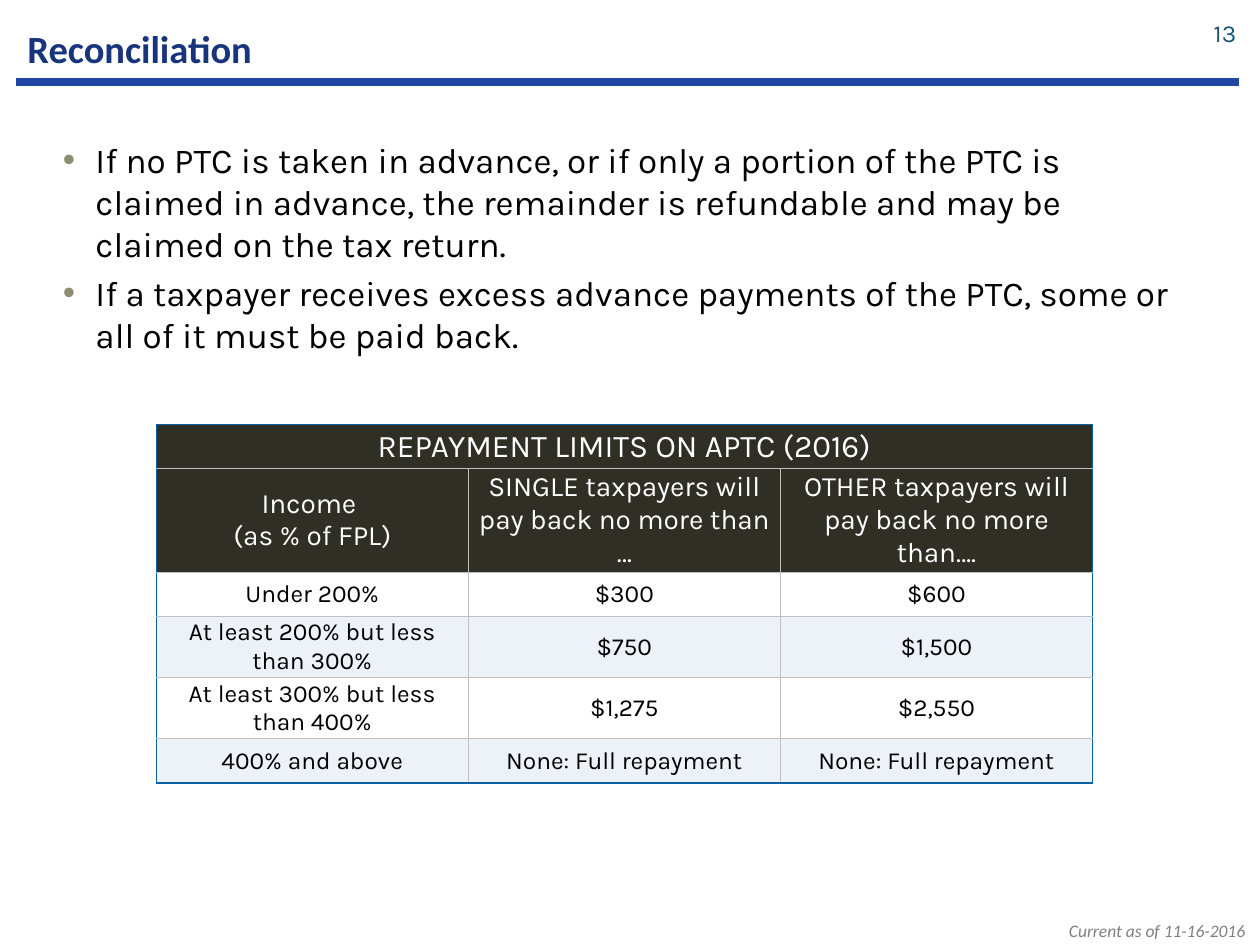
import pptx
import pptx.dml.color
import pptx.enum.shapes
import pptx.enum.text
import pptx.oxml
import pptx.oxml.ns
import pptx.util

COLORS = {
    "title": "18347C", "rule": "2046A5", "number": "175475", "footer": "808080",
    "bullet": "8D8D72", "text": "000000", "header": "2F2F26", "header_text": "FFFFFF",
    "plain": "FFFFFF", "band": "ECF2F8", "outer": "0C61A4", "inner": "BFBFBF",
}
GRID_COLUMNS, GRID_ROWS = 100, 75
CELL = pptx.util.Inches(0.1)

BULLETS = [
    "If no PTC is taken in advance, or if only a portion of the PTC is claimed "
    "in advance, the remainder is refundable and may be claimed on the tax return.",
    "If a taxpayer receives excess advance payments of the PTC, some or all of it "
    "must be paid back.",
]
TABLE = [
    ["REPAYMENT LIMITS ON APTC (2016)", "", ""],
    ["Income \n(as % of FPL)", "SINGLE taxpayers will pay back no more than …",
     "OTHER taxpayers will pay back no more than…."],
    ["Under 200%", "$300", "$600"],
    ["At least 200% but less than 300%", "$750", "$1,500"],
    ["At least 300% but less than 400%", "$1,275", "$2,550"],
    ["400% and above", "None: Full repayment", "None: Full repayment"],
]
HEADER_SIZES = [18, 16]
BODY_SIZE = 14


def grid(*cells):
    """Turn counts of grid columns or rows into slide lengths."""
    return [int(cell * CELL) for cell in cells]


def rgb(name):
    return pptx.dml.color.RGBColor.from_string(COLORS[name])


def format_runs(paragraph, size, color, font="Karla", bold=False, italic=False):
    for run in paragraph.runs:
        run.font.name = font
        run.font.size = pptx.util.Pt(size)
        run.font.color.rgb = rgb(color)
        run.font.bold = bold
        run.font.italic = italic


def add_text(slide, box, text, align="LEFT", anchor="MIDDLE", **style):
    text_frame = slide.shapes.add_textbox(*grid(*box)).text_frame
    text_frame.word_wrap = True
    text_frame.vertical_anchor = pptx.enum.text.MSO_ANCHOR[anchor]
    text_frame.text = text
    for paragraph in text_frame.paragraphs:
        paragraph.alignment = pptx.enum.text.PP_ALIGN[align]
        format_runs(paragraph, **style)
    return text_frame


def add_rule(slide, left, right, row):
    line = slide.shapes.add_connector(
        pptx.enum.shapes.MSO_CONNECTOR.STRAIGHT, *grid(left, row, right, row))
    line.line.color.rgb = rgb("rule")
    line.line.width = pptx.util.Pt(4.75)
    properties = line._element.spPr
    properties.append(properties.makeelement(pptx.oxml.ns.qn("a:effectLst"), {}))


def add_bullets(slide, box, items):
    text_frame = add_text(slide, box, "\n".join(items), anchor="TOP", size=20, color="text")
    indent = pptx.util.Inches(0.26)
    for index, paragraph in enumerate(text_frame.paragraphs):
        if index:
            paragraph.space_before = pptx.util.Pt(4)
        properties = paragraph._p.get_or_add_pPr()
        properties.set("marL", str(indent))
        properties.set("indent", str(-indent))
        namespace = pptx.oxml.ns.nsdecls("a")
        for markup in (
            f'<a:buClr {namespace}><a:srgbClr val="{COLORS["bullet"]}"/></a:buClr>',
            f'<a:buFont {namespace} typeface="Arial"/>',
            f'<a:buChar {namespace} char="•"/>',
        ):
            properties.append(pptx.oxml.parse_xml(markup))


def set_borders(cell, outer_sides):
    """Draw the sides named in outer_sides in the frame colour, the others as thin rules."""
    properties = cell._tc.get_or_add_tcPr()
    for index, side in enumerate("LRTB"):
        color, points = ("outer", 1) if side in outer_sides else ("inner", 0.5)
        properties.insert(index, pptx.oxml.parse_xml(
            f'<a:ln{side} {pptx.oxml.ns.nsdecls("a")} w="{pptx.util.Pt(points)}">'
            f'<a:solidFill><a:srgbClr val="{COLORS[color]}"/></a:solidFill></a:ln{side}>'))


def format_cell(cell, text, size, color, fill, outer_sides, margins):
    cell.text = text
    cell.vertical_anchor = pptx.enum.text.MSO_ANCHOR.MIDDLE
    horizontal, vertical = [pptx.util.Inches(margin) for margin in margins]
    cell.margin_left = cell.margin_right = horizontal
    cell.margin_top = cell.margin_bottom = vertical
    cell.fill.solid()
    cell.fill.fore_color.rgb = rgb(fill)
    set_borders(cell, outer_sides)
    for paragraph in cell.text_frame.paragraphs:
        paragraph.alignment = pptx.enum.text.PP_ALIGN.CENTER
        format_runs(paragraph, size, color)


def add_limits_table(slide, left, top, column_width, row_heights):
    row_count, column_count = len(TABLE), len(TABLE[0])
    box = grid(left, top, column_width * column_count, sum(row_heights))
    table = slide.shapes.add_table(row_count, column_count, *box).table
    for column in table.columns:
        column.width = grid(column_width)[0]
    for row, height in zip(table.rows, row_heights):
        row.height = grid(height)[0]
    for row_index, texts in enumerate(TABLE):
        is_header = row_index < len(HEADER_SIZES)
        size = HEADER_SIZES[row_index] if is_header else BODY_SIZE
        color = "header_text" if is_header else "text"
        fill = "header" if is_header else ("plain", "band")[row_index % 2]
        margins = (0.03, 0.01) if row_index else (0, 0)
        for column_index, text in enumerate(texts):
            edges = {"L": column_index == 0, "R": column_index == column_count - 1,
                     "T": row_index == 0, "B": row_index == row_count - 1}
            outer_sides = [side for side, is_edge in edges.items() if is_edge]
            if row_index == 0:
                outer_sides = ["L", "R", "T"]
            format_cell(table.cell(row_index, column_index), text, size, color, fill,
                        outer_sides, margins)
    table.cell(0, 0).merge(table.cell(0, column_count - 1))


def main():
    presentation = pptx.Presentation()
    presentation.slide_width, presentation.slide_height = grid(GRID_COLUMNS, GRID_ROWS)
    slide = presentation.slides.add_slide(presentation.slide_layouts[6])
    add_text(slide, (59.7, 72.5, 40.1, 2.7), "Current as of 11-16-2016", align="RIGHT",
             anchor="TOP", size=10, color="footer", font="Calibri", italic=True)
    add_rule(slide, 1.3, 98.3, 6.5)
    add_text(slide, (1.2, 1, 94.4, 5.7), "Reconciliation",
             size=22, color="title", font="Calibri", bold=True)
    add_bullets(slide, (4, 10.5, 90, 53.2), BULLETS)
    add_text(slide, (94, 0.6, 5.1, 4), "13", align="RIGHT", size=14, color="number")
    add_limits_table(slide, 12.4, 33.7, 24.77, [3.5, 4.8, 3.5, 3.5, 3.5, 3.5])
    presentation.save("out.pptx")


if __name__ == "__main__":
    main()
